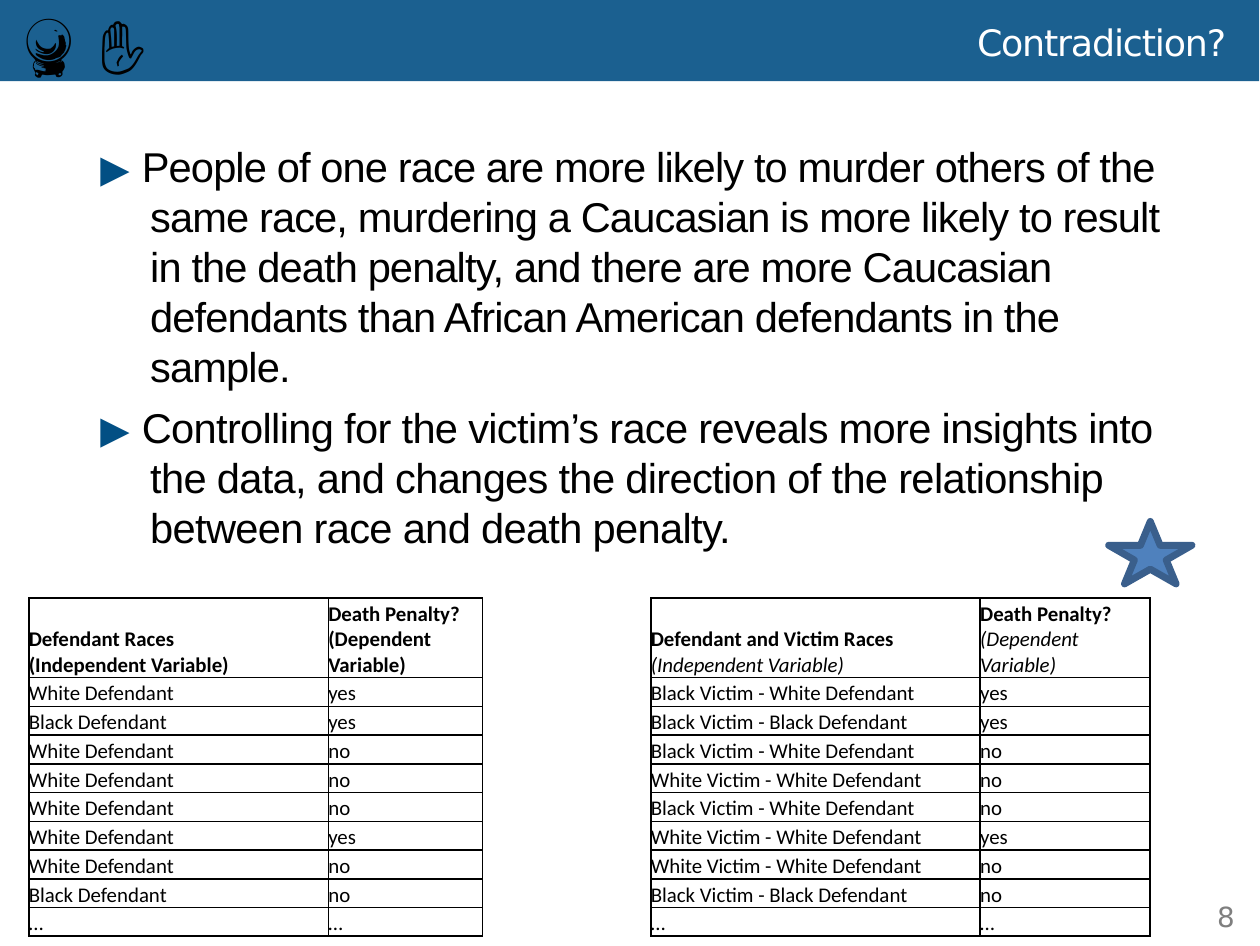
from lxml import etree
from pptx import Presentation
from pptx.dml.color import RGBColor
from pptx.enum import shapes, text
from pptx.oxml import ns
from pptx.util import Pt

BLUE = RGBColor(0x1B, 0x60, 0x90)
BULLET_BLUE = RGBColor(0x02, 0x4F, 0x84)
STAR_FILL = RGBColor(0x4F, 0x81, 0xBD)
STAR_LINE = RGBColor(0x3A, 0x5F, 0x8C)
GRAY = RGBColor(0x7F, 0x7F, 0x7F)
WHITE = RGBColor(0xFF, 0xFF, 0xFF)
BLACK = RGBColor(0, 0, 0)

presentation = Presentation()
presentation.slide_width, presentation.slide_height = Pt(363), Pt(272.5)
slide = presentation.slides.add_slide(presentation.slide_layouts[6])


def write(paragraph, words, font="Calibri", size=6, color=BLACK, bold=False,
          italic=False, spacing=0):
    """Add a run to the paragraph; spacing is the letter spacing in points."""
    run = paragraph.add_run()
    run.text = words
    run.font.name = font
    run.font.size = Pt(size)
    run.font.color.rgb = color
    run.font.bold = bold
    run.font.italic = italic
    if spacing:
        run.font._element.set("spc", str(round(spacing * 100)))


def add_text_frame(left, top, width, height, margins=(0, 0, 0, 0), wrap=True):
    """Add a text box; margins are left, top, right, bottom."""
    box = slide.shapes.add_textbox(Pt(left), Pt(top), Pt(width), Pt(height))
    frame = box.text_frame
    frame.word_wrap = wrap
    (frame.margin_left, frame.margin_top,
     frame.margin_right, frame.margin_bottom) = [Pt(margin) for margin in margins]
    return frame


# Header band
band = slide.shapes.add_shape(shapes.MSO_SHAPE.RECTANGLE, 0, 0, Pt(362.8), Pt(23.4))
band.shadow.inherit = False
band.fill.solid()
band.fill.fore_color.rgb = BLUE
band.line.fill.background()

# Title
frame = add_text_frame(7.9, 4.3, 347.8, 28.8, margins=(0, 1.4, 2.4, 0))
paragraph = frame.paragraphs[0]
paragraph.alignment = text.PP_ALIGN.RIGHT
paragraph.space_before = Pt(1.4)
write(paragraph, "Contradiction?", font="DejaVu Sans", size=10.5, color=WHITE,
      spacing=-0.3)

# Slide number
frame = add_text_frame(349.9, 258.5, 6.5, 11.5, margins=(0.7, 0.7, 0, 0))
paragraph = frame.paragraphs[0]
paragraph.space_before = Pt(0.6)
write(paragraph, "8", font="DejaVu Sans", size=8, color=GRAY, spacing=-0.7)

# Body points, each led by a coloured marker
points = [
    ("People of one race are more likely to murder others of the same race, "
     "murdering a Caucasian is more likely to result in the death penalty, and "
     "there are more Caucasian defendants than African American defendants in "
     "the sample.", 0.9, -0.25),
    ("Controlling for the victim’s race reveals more insights into the data, and "
     "changes the direction of the relationship between race and death penalty.",
     3.2, -0.2),
]
frame = add_text_frame(28.2, 39.6, 311.8, 120.2, margins=(0, 0.9, 0, 0))
for index, (words, space_before, spacing) in enumerate(points):
    paragraph = frame.add_paragraph() if index else frame.paragraphs[0]
    paragraph.space_before = Pt(space_before)
    properties = paragraph._p.get_or_add_pPr()
    properties.set("marL", str(Pt(15.1)))
    properties.set("indent", str(Pt(-14.4)))
    write(paragraph, "▶ ", font="DejaVu Serif", size=11, color=BULLET_BLUE)
    write(paragraph, words, font="Arial", size=12, spacing=spacing)

# Header symbols
for left, symbol in [(0, "🔮"), (21.6, "✋")]:
    frame = add_text_frame(left, -2.4, 32.4, 28.8, margins=(7.2, 3.6, 7.2, 3.6),
                           wrap=False)
    write(frame.paragraphs[0], symbol, size=18)

# Data tables
outcomes = ["yes", "yes", "no", "no", "no", "yes", "no", "no", "…"]
defendants = ["White", "Black", "White", "White", "White", "White", "White", "Black"]
victims = ["Black", "Black", "Black", "White", "Black", "White", "White", "Black"]
pairs = [f"{victim} Victim - {defendant} Defendant"
         for victim, defendant in zip(victims, defendants)]
singles = [f"{defendant} Defendant" for defendant in defendants]
bold, italic = {"bold": True}, {"italic": True}
tables = [
    (187.5, (94.9, 48.9), "Defendant and Victim Races", pairs, italic),
    (8.3, (86.3, 44.5), "Defendant Races", singles, bold),
]
for left, widths, heading, labels, subheading_format in tables:
    rows = [((heading, "(Independent Variable)"),
             ("Death Penalty?", "(Dependent Variable)"))]
    rows += [((label,), (outcome,)) for label, outcome in zip(labels + ["…"], outcomes)]
    table = slide.shapes.add_table(len(rows), 2, Pt(left), Pt(172.2),
                                   Pt(sum(widths)), Pt(97.5)).table
    table.first_row = table.horz_banding = False
    for column, width in zip(table.columns, widths):
        column.width = Pt(width)
    for row_index, row in enumerate(rows):
        table.rows[row_index].height = Pt(8.28 if row_index else 23)
        for column_index, lines in enumerate(row):
            cell = table.cell(row_index, column_index)
            cell.vertical_anchor = text.MSO_ANCHOR.BOTTOM
            cell.margin_left = cell.margin_right = 0
            cell.margin_top = cell.margin_bottom = 0
            for side in ("lnL", "lnR", "lnT", "lnB"):
                border = etree.SubElement(cell._tc.get_or_add_tcPr(),
                                          ns.qn(f"a:{side}"), w=str(Pt(0.5)))
                fill = etree.SubElement(border, ns.qn("a:solidFill"))
                etree.SubElement(fill, ns.qn("a:srgbClr"), val=str(BLACK))
            cell.fill.background()
            paragraph = cell.text_frame.paragraphs[0]
            write(paragraph, lines[0], bold=row_index == 0)
            for line in lines[1:]:
                paragraph.add_line_break()
                write(paragraph, line, **subheading_format)

# Star
star = slide.shapes.add_shape(shapes.MSO_SHAPE.STAR_5_POINT, Pt(319.4), Pt(150.2),
                              Pt(24), Pt(18))
star.shadow.inherit = False
star.fill.solid()
star.fill.fore_color.rgb = STAR_FILL
star.line.color.rgb = STAR_LINE
star.line.width = Pt(2)

presentation.save("out.pptx")
